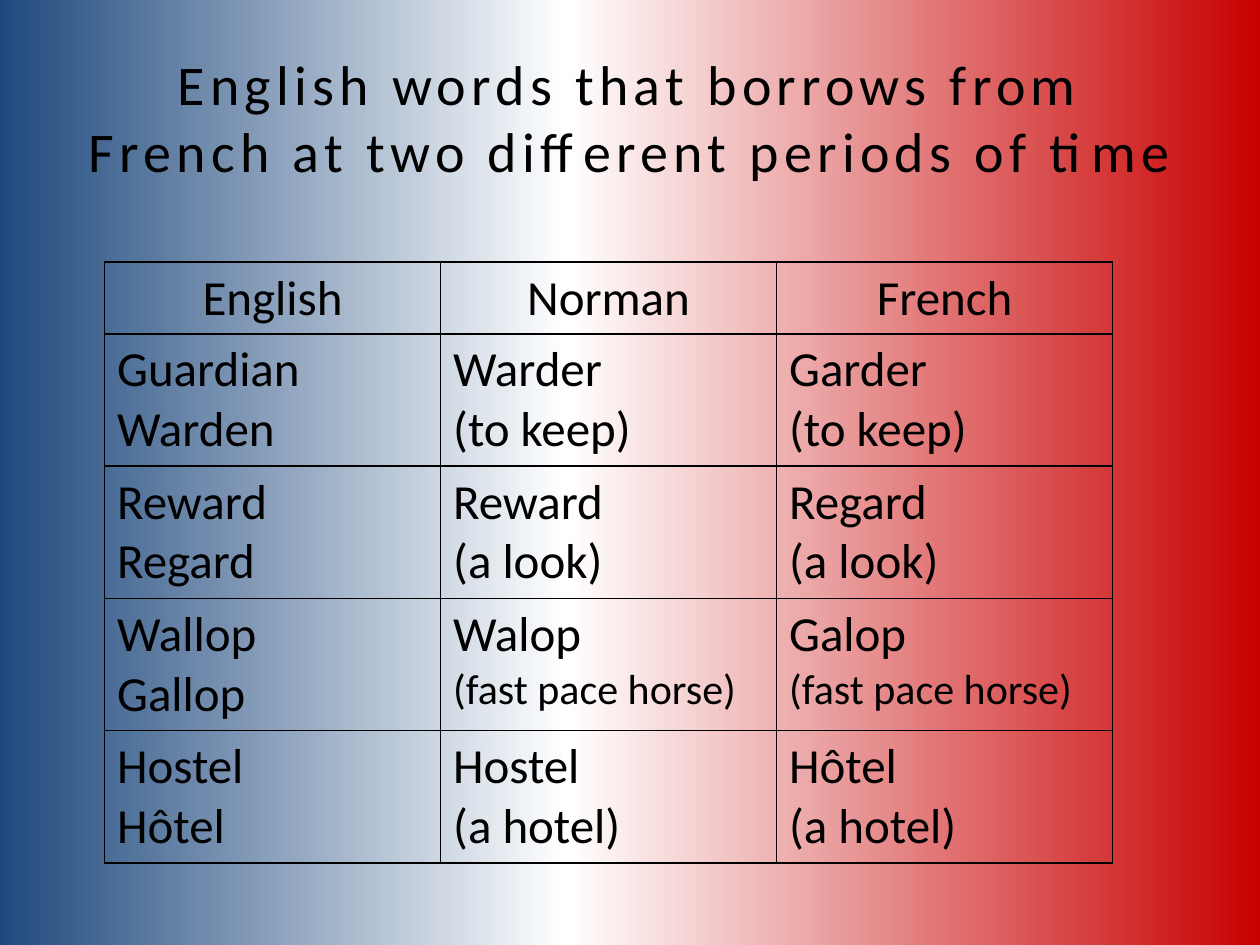
from dataclasses import dataclass

import lxml.etree
import pptx
import pptx.dml.color
import pptx.enum.text
import pptx.oxml.ns
import pptx.util

Inches = pptx.util.Inches
Pt = pptx.util.Pt
qn = pptx.oxml.ns.qn
Align = pptx.enum.text.PP_ALIGN
Anchor = pptx.enum.text.MSO_ANCHOR

COLORS = {"blue": "1F497D", "white": "FFFFFF", "red": "C80000", "black": "000000"}
FONT = "Calibri"


@dataclass
class Stop:
    pos: int
    color: str
    alpha: int


@dataclass
class Row:
    english: str
    norman: str
    french: str
    small: bool = False


STOPS = [Stop(0, "blue", 55), Stop(45, "white", 60), Stop(100, "red", 55)]
HEADS = ["English", "Norman", "French"]
ROWS = [
    Row("Guardian\nWarden", "Warder\n(to keep)", "Garder\n(to keep)"),
    Row("Reward\nRegard", "Reward\n(a look)", "Regard\n(a look)"),
    Row("Wallop\nGallop", "Walop\n(fast pace horse)", "Galop\n(fast pace horse)", small=True),
    Row("Hostel\nHôtel", "Hostel\n(a hotel)", "Hôtel\n(a hotel)"),
]


def add_color(parent, name: str):
    return lxml.etree.SubElement(parent, qn("a:srgbClr"), val=COLORS[name])


def write(frame, text: str, *, size=28, note=None, align=Align.LEFT, spacing=None) -> None:
    """Write one paragraph a line; note is the size of lines in brackets."""
    frame.text = text
    for para in frame.paragraphs:
        para.alignment = align
        for run in para.runs:
            font = run.font
            font.name = FONT
            font.size = Pt(note if note and run.text.startswith("(") else size)
            font.color.rgb = pptx.dml.color.RGBColor.from_string(COLORS["black"])
            if spacing:
                run._r.get_or_add_rPr().set("spc", str(spacing * 100))


def paint_back(slide, stops: list[Stop]) -> None:
    fill = slide.background.fill
    fill.gradient()
    fill.gradient_angle = 0
    items = slide._element.find(".//" + qn("a:gsLst"))
    for old in list(items):
        items.remove(old)
    for stop in stops:
        item = lxml.etree.SubElement(items, qn("a:gs"), pos=str(stop.pos * 1000))
        color = add_color(item, stop.color)
        lxml.etree.SubElement(color, qn("a:alpha"), val=str(stop.alpha * 1000))


def style_cell(cell) -> None:
    props = cell._tc.get_or_add_tcPr()
    for side in ("lnL", "lnR", "lnT", "lnB"):
        line = lxml.etree.SubElement(props, qn("a:" + side), w=str(Pt(1)))
        add_color(lxml.etree.SubElement(line, qn("a:solidFill")), "black")
    cell.fill.background()


def draw_table(slide, heads: list[str], rows: list[Row]) -> None:
    head_high, row_high = 0.57, 1.05
    high = head_high + row_high * len(rows)
    table = slide.shapes.add_table(
        len(rows) + 1, len(heads), Inches(0.83), Inches(2.08), Inches(8), Inches(high)
    ).table
    table.first_row = table.horz_banding = False
    table.rows[0].height = Inches(head_high)
    for col, head in enumerate(heads):
        write(table.cell(0, col).text_frame, head, align=Align.CENTER)
    for num, row in enumerate(rows, 1):
        table.rows[num].height = Inches(row_high)
        for col, text in enumerate((row.english, row.norman, row.french)):
            write(table.cell(num, col).text_frame, text, note=24 if row.small else None)
    for cell in table.iter_cells():
        style_cell(cell)


def main() -> None:
    deck = pptx.Presentation()
    deck.slide_width, deck.slide_height = Inches(10), Inches(7.5)
    slide = deck.slides.add_slide(deck.slide_layouts[6])

    # Flag-coloured background
    paint_back(slide, STOPS)

    # Title
    title = slide.shapes.add_textbox(Inches(0.5), Inches(0.3), Inches(9), Inches(1.25))
    title.text_frame.word_wrap = True
    title.text_frame.vertical_anchor = Anchor.MIDDLE
    write(
        title.text_frame,
        "English words that borrows from French at two different periods of time",
        size=32, align=Align.CENTER, spacing=3,
    )

    # Word table
    draw_table(slide, HEADS, ROWS)
    deck.save("out.pptx")


if __name__ == "__main__":
    main()
